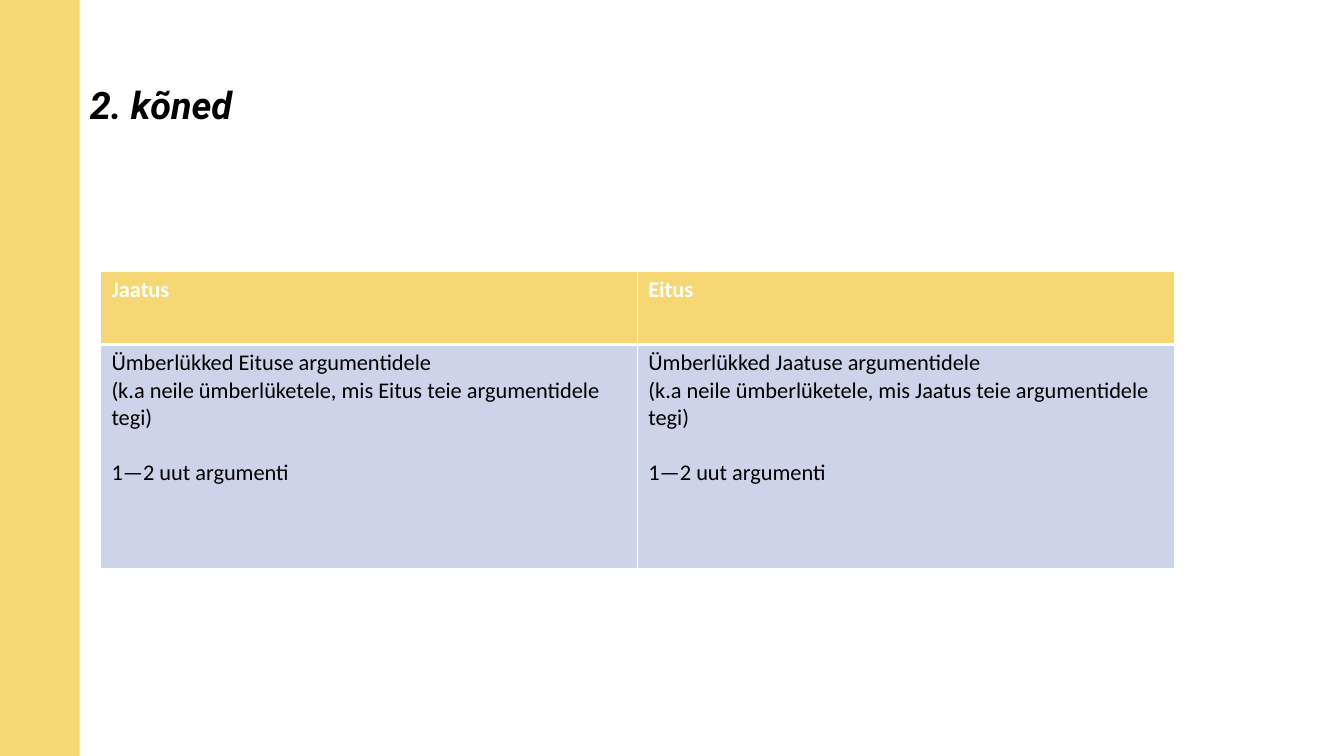
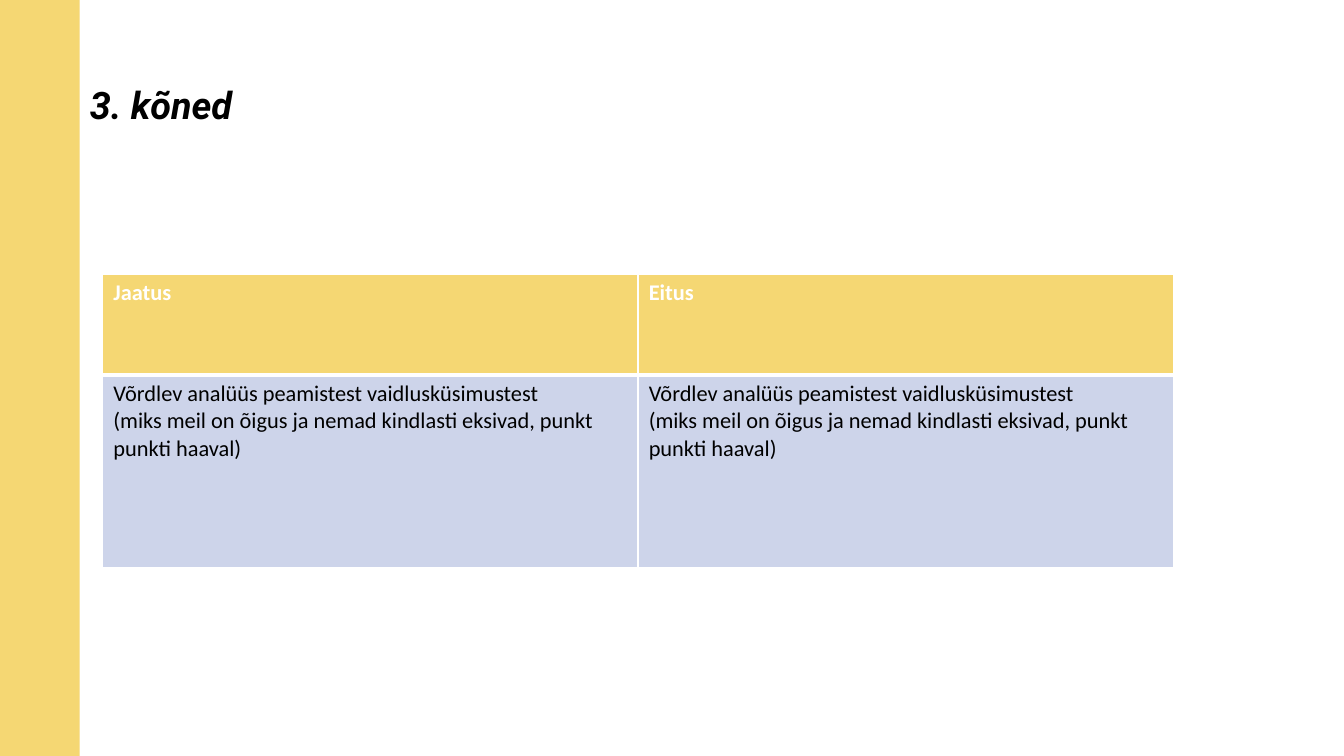
from dataclasses import dataclass

import pptx
import pptx.dml.color
import pptx.enum.shapes
import pptx.enum.text
import pptx.oxml
import pptx.oxml.ns
import pptx.util
from pptx.util import Cm


@dataclass(frozen=True)
class Theme:
    accent: str = "F5D773"
    body_fill: str = "CDD4EA"
    light: str = "FFFFFF"
    dark: str = "000000"
    title_font: str = "Roboto"
    text_font: str = "Calibri"
    title_size: float = 27
    text_size: float = 16
    paragraph_gap: float = 19.5
    thin_line: float = 1
    thick_line: float = 3


THEME = Theme()
BAND_WIDTH = Cm(2.01)
HEADINGS = ("Jaatus", "Eitus")


def rgb(value):
    return pptx.dml.color.RGBColor.from_string(value)


def paint(target, color):
    target.fill.solid()
    target.fill.fore_color.rgb = rgb(color)


def style_font(font, name, size, color, bold=False, italic=False):
    font.name = name
    font.size = pptx.util.Pt(size)
    font.color.rgb = rgb(color)
    font.bold = bold
    font.italic = italic


def add_band(slide, height):
    band = slide.shapes.add_shape(
        pptx.enum.shapes.MSO_SHAPE.RECTANGLE, 0, 0, BAND_WIDTH, height)
    band.shadow.inherit = False
    paint(band, THEME.accent)
    band.line.fill.background()


def format_title(slide, text):
    title = slide.shapes.title
    title.left, title.top = BAND_WIDTH, Cm(1.65)
    title.width, title.height = Cm(27), Cm(2.11)
    frame = title.text_frame
    frame.text = text
    frame.word_wrap = True
    frame.auto_size = pptx.enum.text.MSO_AUTO_SIZE.NONE
    frame.vertical_anchor = pptx.enum.text.MSO_ANCHOR.MIDDLE
    paragraph = frame.paragraphs[0]
    paragraph.alignment = pptx.enum.text.PP_ALIGN.LEFT
    paragraph.line_spacing = 0.9
    style_font(paragraph.font, THEME.title_font, THEME.title_size,
               THEME.dark, bold=True, italic=True)


def set_borders(cell, thick_side):
    """Draw light borders; the side between header and body is thicker."""
    properties = cell._tc.get_or_add_tcPr()
    for side in "LRTB":
        points = THEME.thick_line if side == thick_side else THEME.thin_line
        properties.append(pptx.oxml.parse_xml(
            f'<a:ln{side} {pptx.oxml.ns.nsdecls("a")} w="{pptx.util.Pt(points)}">'
            f'<a:solidFill><a:srgbClr val="{THEME.light}"/></a:solidFill>'
            f'</a:ln{side}>'))


def fill_cell(cell, paragraphs, is_header):
    set_borders(cell, "B" if is_header else "T")
    paint(cell, THEME.accent if is_header else THEME.body_fill)
    cell.margin_left = cell.margin_right = Cm(0.27)
    cell.margin_top = cell.margin_bottom = Cm(0.13)
    cell.text_frame.text = "\n".join(paragraphs)
    for paragraph in cell.text_frame.paragraphs:
        style_font(paragraph.font, THEME.text_font, THEME.text_size,
                   THEME.light if is_header else THEME.dark, bold=is_header)


def add_speech_table(slide, left, top, column_width, row_heights, speeches):
    table = slide.shapes.add_table(
        2, len(HEADINGS), left, top,
        column_width * len(HEADINGS), sum(row_heights)).table
    table.horz_banding = False
    for column in table.columns:
        column.width = column_width
    for row, height in zip(table.rows, row_heights):
        row.height = height
    for index, (heading, speech) in enumerate(zip(HEADINGS, speeches)):
        fill_cell(table.cell(0, index), [heading], is_header=True)
        fill_cell(table.cell(1, index), speech, is_header=False)
    return table


def add_speech_slide(deck, title):
    slide = deck.slides.add_slide(deck.slide_layouts.get_by_name("Title Only"))
    add_band(slide, deck.slide_height)
    format_title(slide, title)
    return slide


def rebuttal_speech(opponent, opponent_genitive):
    return [
        f"Ümberlükked {opponent_genitive} argumentidele",
        f"(k.a neile ümberlüketele, mis {opponent} teie argumentidele tegi)",
        "1—2 uut argumenti",
    ]


def main():
    deck = pptx.Presentation()
    deck.slide_width, deck.slide_height = Cm(33.87), Cm(19.05)

    second = add_speech_slide(deck, "2. kõned")
    rebuttals = add_speech_table(
        second, Cm(2.54), Cm(6.83), Cm(13.53), (Cm(1.85), Cm(5.64)),
        [rebuttal_speech("Eitus", "Eituse"),
         rebuttal_speech("Jaatus", "Jaatuse")])
    for cell in rebuttals.rows[1].cells:
        new_arguments = cell.text_frame.paragraphs[-1]
        new_arguments.space_before = pptx.util.Pt(THEME.paragraph_gap)

    third = add_speech_slide(deck, "3. kõned")
    analysis = ["Võrdlev analüüs peamistest vaidlusküsimustest\v"
                "(miks meil on õigus ja nemad kindlasti eksivad, "
                "punkt punkti haaval)"]
    add_speech_table(third, Cm(2.59), Cm(6.91), Cm(13.49),
                     (Cm(2.54), Cm(4.85)), [analysis] * len(HEADINGS))

    deck.save("out.pptx")


if __name__ == "__main__":
    main()
